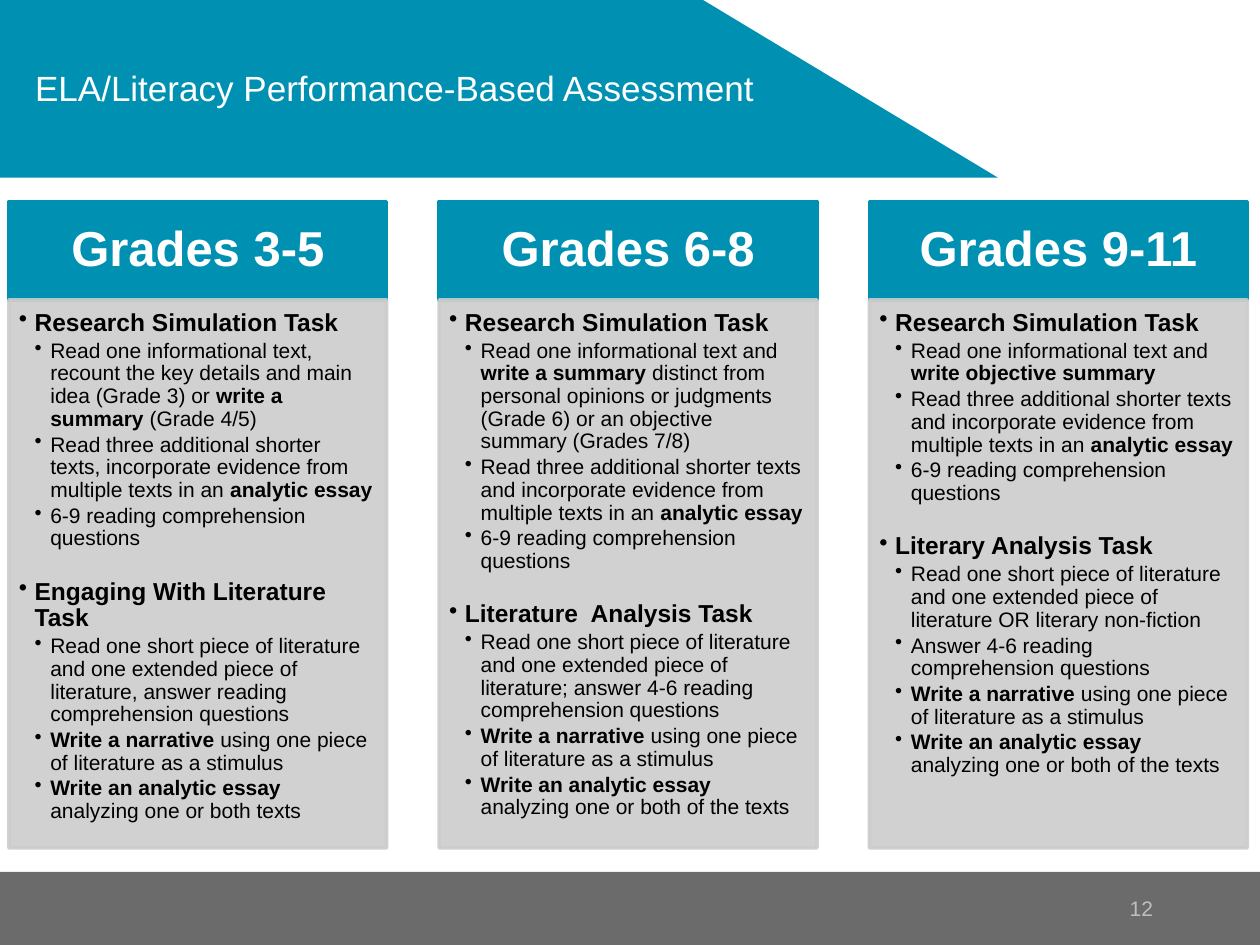
from lxml.etree import SubElement
from pptx import Presentation
from pptx.dml.color import RGBColor
from pptx.enum.shapes import MSO_SHAPE as Preset
from pptx.enum.text import MSO_ANCHOR as Anchor, PP_ALIGN as Align
from pptx.oxml.ns import qn
from pptx.util import Inches, Pt

WIDTH, HEIGHT = Inches(10), Inches(7.5)
FONT = "Arial"
COLORS = {
    "teal": "0091B2",
    "panel": "CCCCCC",
    "footer": "6B6B6B",
    "white": "FFFFFF",
    "black": "000000",
    "number": "BFBFBF",
}
COLUMN_LEFT, COLUMN_STEP, COLUMN_WIDTH = 0.007, 0.3415, 0.3
HEADER_TOP, PANEL_TOP, PANEL_BOTTOM = 1.6 / 7.5, 2.38 / 7.5, 6.73 / 7.5
FOOTER_TOP = 6.92 / 7.5

RESEARCH = "Research Simulation Task"
SHORTER_TEXTS = ("Read three additional shorter texts and incorporate evidence "
                 "from multiple texts in an *analytic essay*")
QUESTIONS = "6-9 reading comprehension questions"
LITERATURE = "Read one short piece of literature and one extended piece of literature"
NARRATIVE = "*Write a narrative *using one piece of literature as a stimulus"
GRADES = [
    ("Grades 3-5", [
        (RESEARCH, [
            "Read one informational text, recount the key details and main idea "
            "(Grade 3) or *write a summary *(Grade 4/5)",
            "Read three additional shorter texts, incorporate evidence from "
            "multiple texts in an *analytic essay*",
            QUESTIONS,
        ]),
        ("Engaging With Literature Task", [
            LITERATURE + ", answer reading comprehension questions",
            NARRATIVE,
            "*Write an analytic essay *analyzing one or both texts",
        ]),
    ]),
    ("Grades 6-8", [
        (RESEARCH, [
            "Read one informational text and *write a summary *distinct from "
            "personal opinions or judgments (Grade 6) or an objective summary "
            "(Grades 7/8)",
            SHORTER_TEXTS,
            QUESTIONS,
        ]),
        ("Literature  Analysis Task", [
            LITERATURE + "; answer 4-6 reading comprehension questions",
            NARRATIVE,
            "*Write an analytic essay *analyzing one or both of the texts",
        ]),
    ]),
    ("Grades 9-11", [
        (RESEARCH, [
            "Read one informational text and *write objective summary*",
            SHORTER_TEXTS,
            QUESTIONS,
        ]),
        ("Literary Analysis Task", [
            LITERATURE + " OR literary non-fiction",
            "Answer 4-6 reading comprehension questions",
            NARRATIVE,
            "*Write an analytic essay* analyzing one or both of the texts",
        ]),
    ]),
]


def area(left, top, width, height):
    return (round(left * WIDTH), round(top * HEIGHT),
            round(width * WIDTH), round(height * HEIGHT))


def paint(shape, color, line_width=None, opacity=None):
    shape.shadow.inherit = False
    shape.fill.solid()
    shape.fill.fore_color.rgb = RGBColor.from_string(COLORS[color])
    if line_width is None:
        shape.line.fill.background()
    else:
        shape.line.color.rgb = RGBColor.from_string(COLORS[color])
        shape.line.width = Pt(line_width)
    if opacity is not None:
        for tone in shape.element.spPr.iter(qn("a:srgbClr")):
            SubElement(tone, qn("a:alpha"), val=str(opacity * 1000))


def add_block(slide, place, color, **style):
    block = slide.shapes.add_shape(Preset.RECTANGLE, *place)
    paint(block, color, **style)
    return block


def prepare_frame(shape, anchor, insets=(0.1, 0.05, 0.1, 0.05)):
    frame = shape.text_frame
    frame.word_wrap = True
    frame.vertical_anchor = anchor
    (frame.margin_left, frame.margin_top,
     frame.margin_right, frame.margin_bottom) = map(Inches, insets)
    return frame


def add_run(paragraph, text, size, color, bold=False):
    run = paragraph.add_run()
    run.text = text
    run.font.name = FONT
    run.font.size = Pt(size)
    run.font.bold = bold
    run.font.color.rgb = RGBColor.from_string(COLORS[color])


def add_label(slide, place, text, size, color, align, indent=0):
    frame = prepare_frame(slide.shapes.add_textbox(*place), Anchor.MIDDLE)
    label = frame.paragraphs[0]
    label.alignment = align
    label._p.get_or_add_pPr().set("marL", str(Inches(indent)))
    add_run(label, text, size, color)


def add_bullet(frame, text, level, size, gap=0):
    first = not frame.paragraphs[0].runs
    bullet = frame.paragraphs[0] if first else frame.add_paragraph()
    properties = bullet._p.get_or_add_pPr()
    properties.set("marL", str(Inches(0.125 * level)))
    properties.set("indent", str(-Inches(0.125)))
    SubElement(properties, qn("a:buChar"), char="•")
    bullet.level = level
    bullet.alignment = Align.LEFT
    bullet.line_spacing = 0.9
    bullet.space_before = Pt(gap)
    bullet.space_after = Pt(0.15 * size)
    for index, part in enumerate(text.split("*")):
        if part:
            add_run(bullet, part, size, "black", bold=index % 2 == 1)


def add_banner(slide):
    edge, slope_start, bottom = Inches(7.92), Inches(5.58), Inches(1.41)
    outline = slide.shapes.build_freeform(0, 0)
    outline.add_line_segments([(slope_start, 0), (edge, bottom), (0, bottom)])
    paint(outline.convert_to_shape(), "teal")
    add_label(slide, area(0, 0.004, 0.692, 0.177),
              "ELA/Literacy Performance-Based Assessment",
              20, "white", Align.LEFT, indent=0.18)


def add_grade_column(slide, column, grade, tasks):
    left = COLUMN_LEFT + column * COLUMN_STEP
    header = add_block(
        slide, area(left, HEADER_TOP, COLUMN_WIDTH, PANEL_TOP - HEADER_TOP),
        "teal", line_width=2)
    frame = prepare_frame(header, Anchor.MIDDLE, (0.22, 0.12, 0.22, 0.12))
    heading = frame.paragraphs[0]
    heading.alignment = Align.CENTER
    heading.line_spacing = 0.9
    add_run(heading, grade, 28, "white", bold=True)

    panel = add_block(
        slide, area(left, PANEL_TOP, COLUMN_WIDTH, PANEL_BOTTOM - PANEL_TOP),
        "panel", line_width=2, opacity=90)
    frame = prepare_frame(panel, Anchor.TOP, (0.08, 0.08, 0.11, 0.12))
    for index, (task, steps) in enumerate(tasks):
        add_bullet(frame, f"*{task}*", 1, 14, gap=14.5 * index)
        for step in steps:
            add_bullet(frame, step, 2, 12)


def add_footer(slide):
    add_block(slide, area(0, FOOTER_TOP, 1, 1 - FOOTER_TOP), "footer")
    add_label(slide, area(0.758, FOOTER_TOP, 0.167, 1 - FOOTER_TOP),
              "12", 12, "number", Align.RIGHT)


def main():
    deck = Presentation()
    deck.slide_width, deck.slide_height = WIDTH, HEIGHT
    slide = deck.slides.add_slide(deck.slide_layouts[6])
    add_banner(slide)
    for column, (grade, tasks) in enumerate(GRADES):
        add_grade_column(slide, column, grade, tasks)
    add_footer(slide)
    deck.save("out.pptx")


if __name__ == "__main__":
    main()
